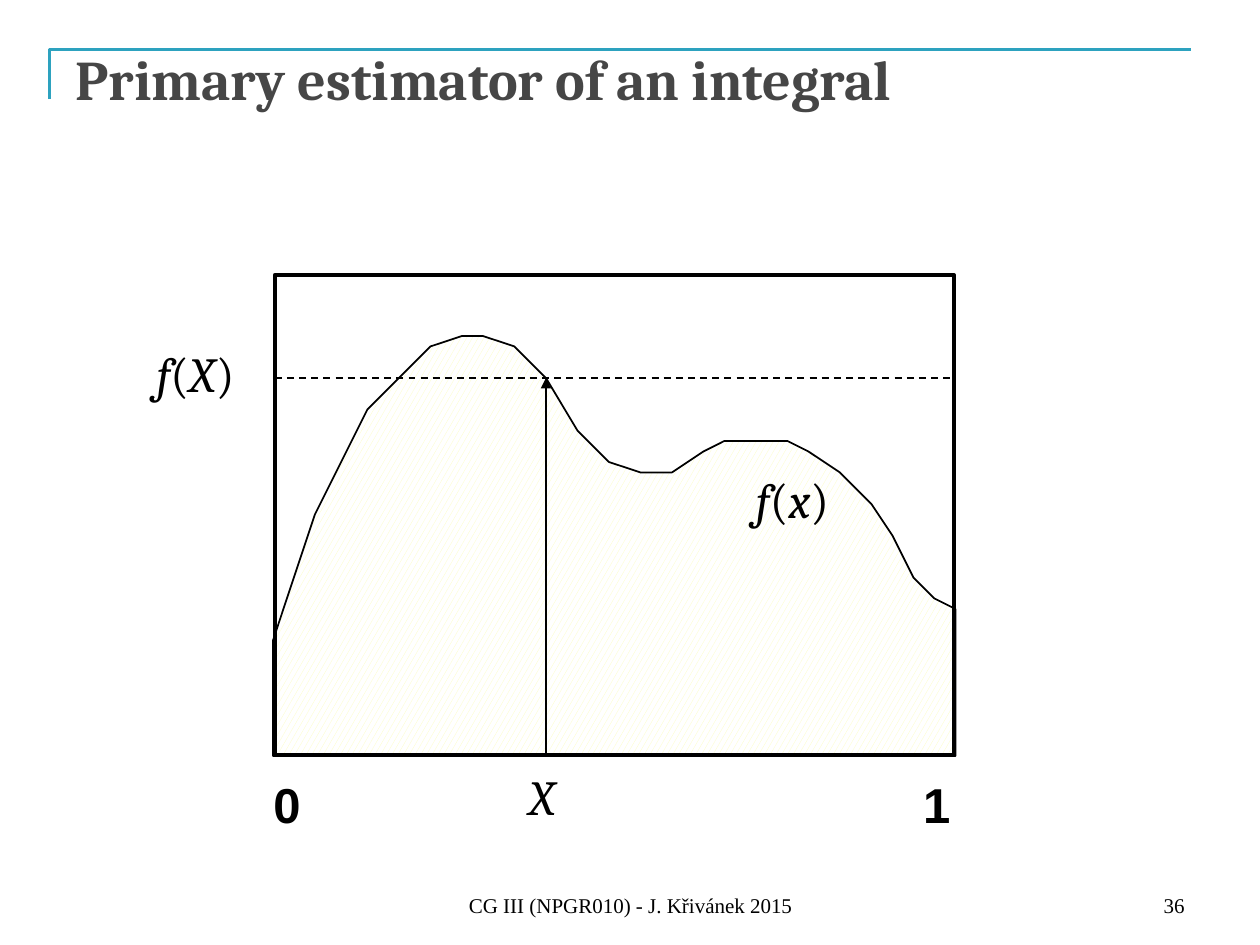
import pptx
import pptx.util
import pptx.dml.color
import pptx.enum.dml
import pptx.enum.shapes
import pptx.enum.text
import pptx.oxml.ns
from lxml import etree

Cm, Pt = pptx.util.Cm, pptx.util.Pt
RGB = pptx.dml.color.RGBColor
ALIGN = pptx.enum.text.PP_ALIGN
ANCHOR = pptx.enum.text.MSO_ANCHOR

BLACK = RGB(0x00, 0x00, 0x00)
WHITE = RGB(0xFF, 0xFF, 0xFF)
GREY = RGB(0x46, 0x46, 0x46)
TEAL = RGB(0x2D, 0xA2, 0xBF)
CREAM = RGB(0xFC, 0xFE, 0xB9)

# Content
TITLE = "Primary estimator of an integral"
# Labels: left, top, width, font, bold, runs of (text, italic)
LABELS = [
    (10.41, 15.32, 1.22, "Cambria", False, [("X", True)]),
    (14.99, 9.35, 2.08, "Cambria", False,
     [("f", True), ("(", False), ("x", True), (")", False)]),
    (2.69, 6.81, 2.54, "Cambria", False,
     [(" ", False), ("f", True), ("(", False), ("X", True), (")", False)]),
    (5.26, 15.49, 1.07, "Arial", True, [("0", False)]),
    (18.36, 15.49, 1.07, "Arial", True, [("1", False)]),
]
# Footers: left, width, alignment, text
FOOTERS = [
    (8.69, 8.05, ALIGN.CENTER, "CG III (NPGR010) - J. Křivánek 2015"),
    (18.21, 5.92, ALIGN.RIGHT, "36"),
]
# Area under f(x), on a grid of twelve units to the inch
GRID = Cm(2.54 / 12)
CURVE = [
    (26, 61), (30, 49), (35, 39), (41, 33), (44, 32), (46, 32), (49, 33),
    (52, 36), (55, 41), (58, 44), (61, 45), (64, 45), (67, 43), (69, 42),
    (72, 42), (75, 42), (77, 43), (80, 45), (83, 48), (85, 51), (87, 55),
    (89, 57), (91, 58),
]
BASE = 72
SAMPLE_X, SAMPLE_Y = 52 * GRID, 36 * GRID
LEFT, TOP, WIDTH, HEIGHT = Cm(5.54), Cm(5.54), Cm(13.69), Cm(9.68)


def add_run(p, text, font, size, color, bold=False, italic=False):
    r = p.add_run()
    r.text = text
    r.font.name, r.font.size = font, Pt(size)
    r.font.bold, r.font.italic = bold, italic
    r.font.color.rgb = color


def set_line(shape, color, width):
    shape.line.color.rgb = color
    shape.line.width = Pt(width)


def add_outline(s, points, scale, close):
    builder = s.shapes.build_freeform(*points[0], scale=scale)
    builder.add_line_segments(points[1:], close=close)
    sp = builder.convert_to_shape()
    sp.shadow.inherit = False
    return sp


def add_line(s, x1, y1, x2, y2):
    line = s.shapes.add_connector(
        pptx.enum.shapes.MSO_CONNECTOR.STRAIGHT, x1, y1, x2, y2)
    set_line(line, BLACK, 1)
    etree.SubElement(line._element.spPr, pptx.oxml.ns.qn("a:effectLst"))
    return line


prs = pptx.Presentation()
prs.slide_width, prs.slide_height = Cm(25.4), Cm(19.05)
s = prs.slides.add_slide(prs.slide_layouts[5])

# Title with its corner rule
rule = add_outline(s, [(1.07, 2.34), (1.07, 0.64), (23.93, 0.64)], Cm(1), False)
rule.fill.background()
set_line(rule, TEAL, 1.5)

title = s.shapes.title
title.left, title.top, title.width, title.height = (
    Cm(1.27), Cm(0.76), Cm(22.86), Cm(3.18))
tf = title.text_frame
tf.vertical_anchor = ANCHOR.TOP
tf.auto_size = pptx.enum.text.MSO_AUTO_SIZE.NONE
tf.paragraphs[0].alignment = ALIGN.LEFT
add_run(tf.paragraphs[0], TITLE, "Cambria", 32, GREY, bold=True)

# Area under the function
area = add_outline(s, CURVE + [(CURVE[-1][0], BASE), (CURVE[0][0], BASE)],
                   GRID, True)
area.fill.patterned()
area.fill.pattern = pptx.enum.dml.MSO_PATTERN.LARGE_CONFETTI
area.fill.fore_color.rgb = CREAM
area.fill.back_color.rgb = WHITE
set_line(area, BLACK, 1)

# Frame of the plot
frame = s.shapes.add_shape(
    pptx.enum.shapes.MSO_SHAPE.RECTANGLE, LEFT, TOP, WIDTH, HEIGHT)
frame.shadow.inherit = False
frame.fill.background()
set_line(frame, BLACK, 2)

# Sample arrow and its function value
arrow = add_line(s, SAMPLE_X, Cm(15.26), SAMPLE_X, SAMPLE_Y)
etree.SubElement(arrow.line._get_or_add_ln(), pptx.oxml.ns.qn("a:tailEnd"),
                 type="triangle")
level = add_line(s, LEFT, SAMPLE_Y, LEFT + WIDTH, SAMPLE_Y)
level.line.dash_style = pptx.enum.dml.MSO_LINE.DASH

# Labels
for left, top, width, font, bold, runs in LABELS:
    tf = s.shapes.add_textbox(Cm(left), Cm(top), Cm(width), Cm(1.45)).text_frame
    tf.word_wrap = False
    tf.auto_size = pptx.enum.text.MSO_AUTO_SIZE.SHAPE_TO_FIT_TEXT
    for text, italic in runs:
        add_run(tf.paragraphs[0], text, font, 28, BLACK, bold, italic)

# Footer and slide number
for left, width, align, text in FOOTERS:
    tf = s.shapes.add_textbox(Cm(left), Cm(17.35), Cm(width), Cm(1.27)).text_frame
    tf.word_wrap = True
    tf.vertical_anchor = ANCHOR.BOTTOM
    tf.paragraphs[0].alignment = align
    add_run(tf.paragraphs[0], text, "Times New Roman", 12, BLACK)

prs.save("out.pptx")
